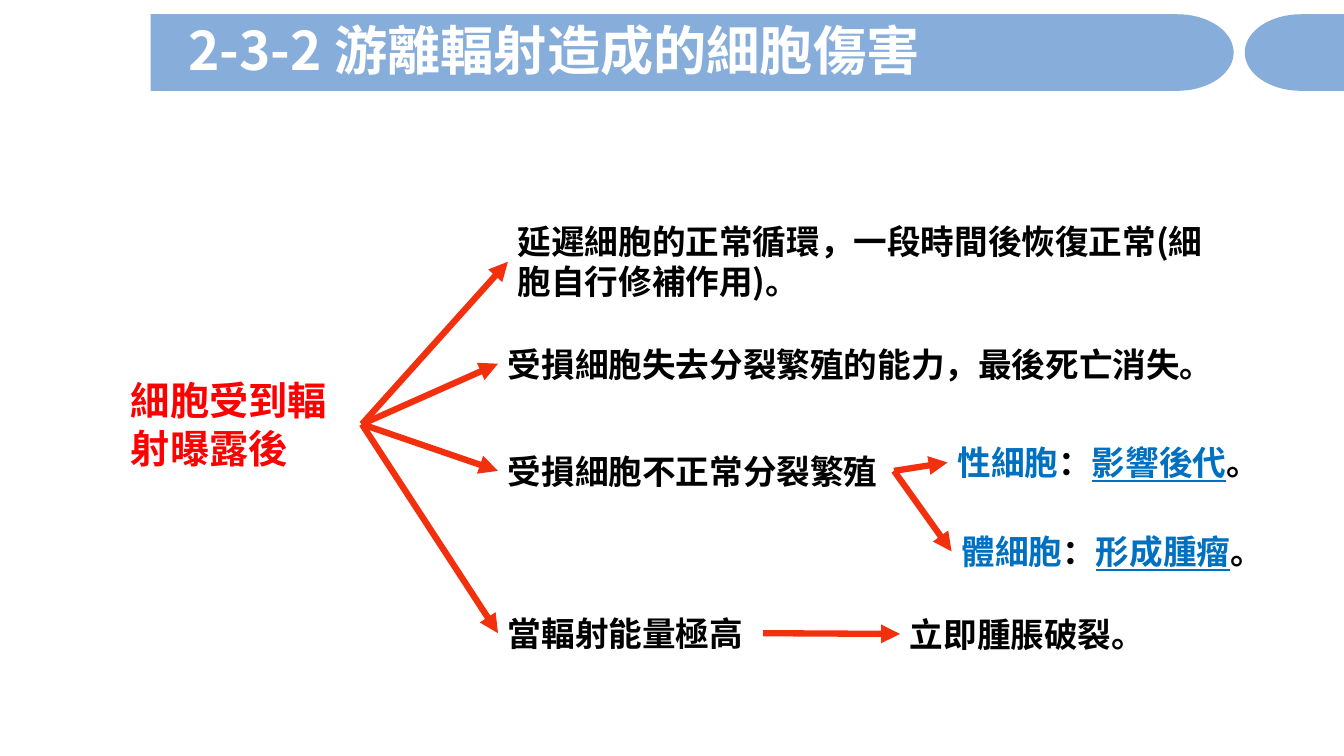
"""Build the slide on cell damage caused by ionizing radiation."""
import math
from dataclasses import dataclass

from lxml import etree
from pptx import Presentation
from pptx.dml.color import RGBColor
from pptx.enum import shapes, text
from pptx.oxml.ns import qn
from pptx.util import Cm, Pt


@dataclass(frozen=True)
class Theme:
    font: str = "Noto Sans CJK SC"
    band: str = "87ADDB"
    white: str = "FFFFFF"
    black: str = "000000"
    red: str = "FF0000"
    blue: str = "0070C0"
    arrow: str = "F3300E"
    title_size: int = 38
    cause_size: int = 28
    body_size: int = 24
    arrow_width: float = 4.5


THEME = Theme()


@dataclass(frozen=True)
class Span:
    text: str
    color: str = THEME.black
    underline: bool = False


@dataclass(frozen=True)
class Label:
    name: str
    left: float
    top: float
    width: float
    height: float
    spans: tuple[Span, ...]
    size: int = THEME.body_size


@dataclass(frozen=True)
class Band:
    flat_x: float
    round_x: float


def cell_outcome(cell: str, outcome: str) -> tuple[Span, ...]:
    """Return the coloured spans naming a cell type and its outcome."""
    return (Span(cell, THEME.blue), Span("："),
            Span(outcome, THEME.blue, True), Span("。"))


BAND_TOP, BAND_BOTTOM, BAND_CURVE = 0.36, 2.29, 1.42
BANDS = (Band(0, 31.09), Band(33.87, 31.37))
TITLE = Label("title", 4.5, 0.51, 25.2, 1.65,
              (Span("2-3-2 游離輻射造成的細胞傷害", THEME.white),), THEME.title_size)
LABELS = (
    Label("exposure", 3.05, 9.37, 6.07, 2.64,
          (Span("細胞受到輻射曝露後", THEME.red),), THEME.cause_size),
    Label("delay", 12.8, 5.44, 18.24, 2.31,
          (Span("延遲細胞的正常循環，一段時間後恢復正常(細胞自行修補作用)。"),)),
    Label("death", 12.55, 8.53, 18.49, 1.27,
          (Span("受損細胞失去分裂繁殖的能力，最後死亡消失。"),)),
    Label("abnormal", 12.55, 11.23, 9.98, 1.27, (Span("受損細胞不正常分裂繁殖"),)),
    Label("extreme", 12.55, 15.32, 6.68, 1.27, (Span("當輻射能量極高"),)),
    Label("rupture", 22.68, 15.34, 5.84, 1.27, (Span("立即腫脹破裂。"),)),
    Label("germ", 23.88, 11.02, 7.72, 1.27, cell_outcome("性細胞", "影響後代")),
    Label("somatic", 23.98, 13.26, 7.65, 1.27, cell_outcome("體細胞", "形成腫瘤")),
)
BRANCHES = {
    "exposure": ("delay", "death", "abnormal", "extreme"),
    "abnormal": ("germ", "somatic"),
    "extreme": ("rupture",),
}


def paint(sp, color: str) -> None:
    """Give a shape a plain fill without outline or shadow."""
    sp.shadow.inherit = False
    sp.fill.solid()
    sp.fill.fore_color.rgb = RGBColor.from_string(color)
    sp.line.fill.background()


def add_band(slide, band: Band) -> None:
    """Draw a header band with one elliptical end."""
    side = math.copysign(1, band.round_x - band.flat_x)
    center_x = band.round_x - side * BAND_CURVE
    center_y = (BAND_TOP + BAND_BOTTOM) / 2
    radius_y = (BAND_BOTTOM - BAND_TOP) / 2
    angles = [math.radians(a) for a in range(-90, 91, 5)]
    points = [(Cm(center_x + side * BAND_CURVE * math.cos(a)),
               Cm(center_y + radius_y * math.sin(a))) for a in angles]
    points.append((Cm(band.flat_x), Cm(BAND_BOTTOM)))
    builder = slide.shapes.build_freeform(Cm(band.flat_x), Cm(BAND_TOP))
    builder.add_line_segments(points, close=True)
    paint(builder.convert_to_shape(), THEME.band)


def add_label(slide, label: Label):
    """Add a wrapped bold text box and return it."""
    sp = slide.shapes.add_textbox(Cm(label.left), Cm(label.top),
                                  Cm(label.width), Cm(label.height))
    tf = sp.text_frame
    tf.word_wrap = True
    p = tf.paragraphs[0]
    p.font.size = Pt(label.size)
    p.font.bold = True
    p.font.name = THEME.font
    defaults = p._p.get_or_add_pPr().find(qn("a:defRPr"))
    etree.SubElement(defaults, qn("a:ea"), typeface=THEME.font)
    for span in label.spans:
        r = p.add_run()
        r.text = span.text
        r.font.color.rgb = RGBColor.from_string(span.color)
        if span.underline:
            r.font.underline = True
    return sp


def add_title(slide) -> None:
    """Add the header title, centred vertically in its band."""
    tf = add_label(slide, TITLE).text_frame
    tf.vertical_anchor = text.MSO_ANCHOR.MIDDLE
    tf.paragraphs[0].line_spacing = 0.9
    tf.paragraphs[0].space_before = Pt(10)


def add_arrow(slide, source, target) -> None:
    """Join the right side of one box to the left side of another."""
    arrow = slide.shapes.add_connector(shapes.MSO_CONNECTOR.STRAIGHT, 0, 0, 0, 0)
    arrow.begin_connect(source, 3)
    arrow.end_connect(target, 1)
    arrow.line.color.rgb = RGBColor.from_string(THEME.arrow)
    arrow.line.width = Pt(THEME.arrow_width)
    properties = arrow._element.spPr
    etree.SubElement(properties.find(qn("a:ln")), qn("a:tailEnd"), type="triangle")
    etree.SubElement(properties, qn("a:effectLst"))


def main() -> None:
    """Assemble and save the slide."""
    prs = Presentation()
    prs.slide_width, prs.slide_height = Cm(33.87), Cm(19.05)
    slide = prs.slides.add_slide(prs.slide_layouts[6])
    for band in BANDS:
        add_band(slide, band)
    emblem = slide.shapes.add_shape(shapes.MSO_SHAPE.RECTANGLE, 0, Cm(BAND_TOP),
                                    Cm(3.8), Cm(BAND_BOTTOM - BAND_TOP))
    paint(emblem, THEME.white)
    add_title(slide)
    boxes = {}
    for label in LABELS:
        boxes[label.name] = add_label(slide, label)
        boxes[label.name].text_frame.auto_size = text.MSO_AUTO_SIZE.SHAPE_TO_FIT_TEXT
    for source, targets in BRANCHES.items():
        for target in targets:
            add_arrow(slide, boxes[source], boxes[target])
    prs.save("out.pptx")


if __name__ == "__main__":
    main()
